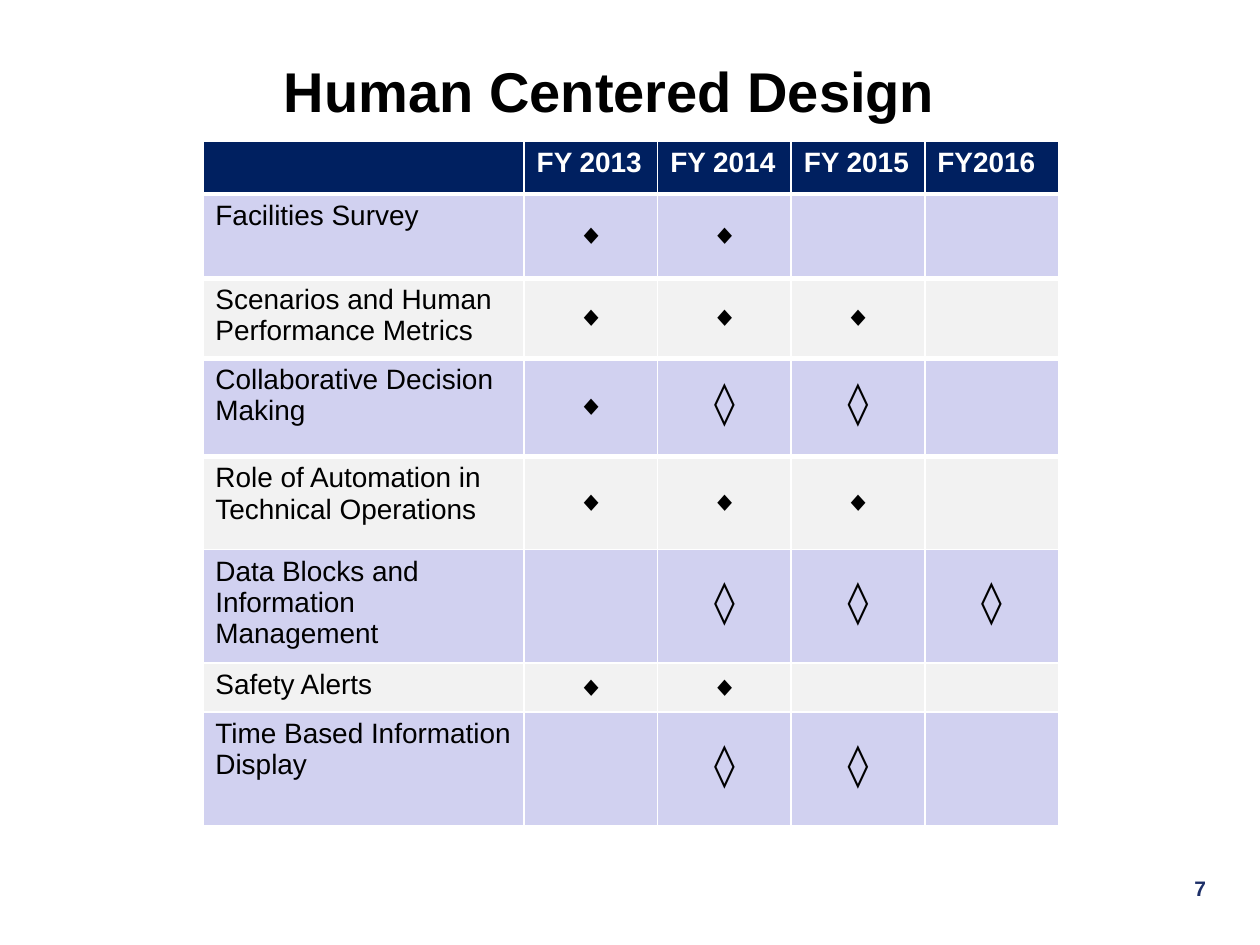
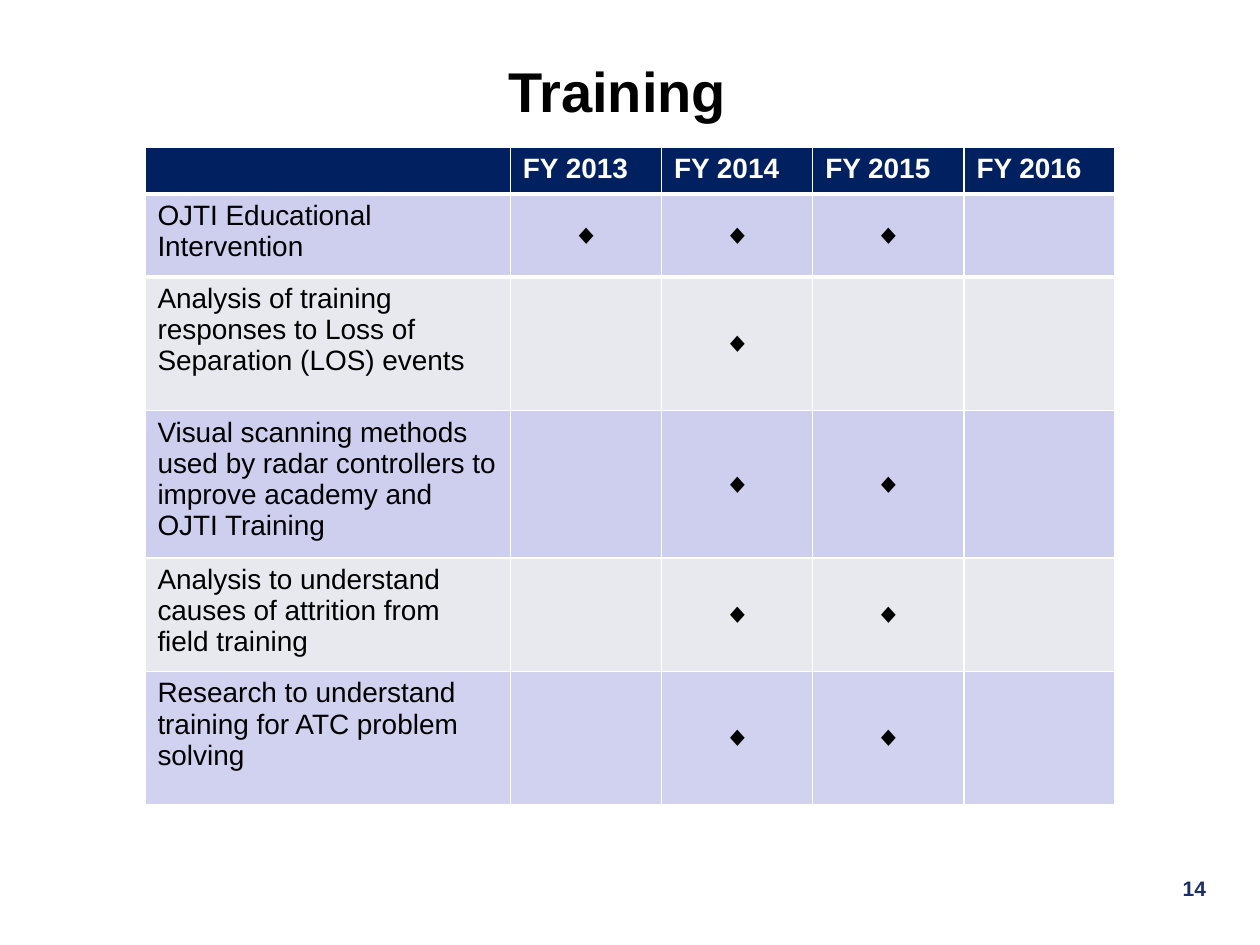
from pptx import Presentation
from pptx.dml.color import RGBColor
from pptx.enum import text as t
from pptx.oxml import parse_xml
from pptx.oxml import ns
from pptx.util import Inches, Pt

NAVY = RGBColor(0x00, 0x20, 0x60)
NUMBER_BLUE = RGBColor(0x1D, 0x2F, 0x68)
LILAC = RGBColor(0xD1, 0xD1, 0xF0)
DEEP_LILAC = RGBColor(0xCE, 0xCE, 0xEF)
PALE_GREY = RGBColor(0xF2, 0xF2, 0xF2)
COOL_GREY = RGBColor(0xE8, 0xE8, 0xEF)
BLACK = RGBColor(0x00, 0x00, 0x00)
WHITE = RGBColor(0xFF, 0xFF, 0xFF)

TITLE_BOX = (0.47, 0.38, 8.86, 0.67)
NUMBER_BOX = (7.59, 6.9, 2.08, 0.5)
MARK_STYLES = {
    "◆": dict(size=16),
    "◊": dict(size=24, font="League Spartan", bold=True),
}

DESIGN_ROWS = [
    ("Facilities Survey", "◆◆--", 0.67, LILAC),
    ("Scenarios and Human Performance Metrics", "◆◆◆-", 0.63, PALE_GREY),
    ("Collaborative Decision Making", "◆◊◊-", 0.78, LILAC),
    ("Role of Automation in Technical Operations", "◆◆◆-", 0.74, PALE_GREY),
    ("Data Blocks and Information Management", "-◊◊◊", 0.9, LILAC),
    ("Safety Alerts", "◆◆--", 0.39, PALE_GREY),
    ("Time Based Information Display", "-◊◊-", 0.9, LILAC),
]
TRAINING_ROWS = [
    ("OJTI Educational Intervention", "◆◆◆-", 0.66, DEEP_LILAC),
    ("Analysis of training responses to Loss of Separation (LOS) events",
     "-◆--", 1.06, COOL_GREY),
    ("Visual scanning methods used by radar controllers to improve academy "
     "and OJTI Training", "-◆◆-", 1.17, DEEP_LILAC),
    ("Analysis to understand causes of attrition from field training",
     "-◆◆-", 0.9, COOL_GREY),
    ("Research to understand training for ATC problem solving",
     "-◆◆-", 1.06, LILAC),
]


def write(frame, text, size=16, font="Arial", color=BLACK, bold=False,
          align=t.PP_ALIGN.LEFT):
    """Put one formatted paragraph into a text frame."""
    para = frame.paragraphs[0]
    para.alignment = align
    span = para.add_run()
    span.text = text
    span.font.size = Pt(size)
    span.font.name = font
    span.font.bold = bold
    span.font.color.rgb = color


def place(shape, box):
    """Move and size a shape to a box given in inches."""
    shape.left, shape.top, shape.width, shape.height = map(Inches, box)


def add_title(page, text, box):
    """Fill the title placeholder and fit it to the box."""
    title = page.shapes.title
    place(title, box)
    title.text_frame.vertical_anchor = t.MSO_ANCHOR.MIDDLE
    write(title.text_frame, text, size=32, bold=True, align=t.PP_ALIGN.CENTER)


def add_number(page, number, box):
    """Write the page number at the right of the box."""
    frame = page.shapes.add_textbox(*map(Inches, box)).text_frame
    frame.word_wrap = True
    write(frame, str(number), size=12, color=NUMBER_BLUE, bold=True,
          align=t.PP_ALIGN.RIGHT)


def style_cell(cell, fill, top, bottom):
    """Give a cell white borders and a solid fill."""
    properties = cell._tc.get_or_add_tcPr()
    for side, width in (("L", 1), ("R", 1), ("T", top), ("B", bottom)):
        properties.append(parse_xml(
            f'<a:ln{side} {ns.nsdecls("a")} w="{Pt(width)}"><a:solidFill>'
            f'<a:srgbClr val="{WHITE}"/></a:solidFill></a:ln{side}>'))
    cell.fill.solid()
    cell.fill.fore_color.rgb = fill


def fill_cell(cell, text, row, column):
    """Write a heading, a topic, a centred mark, or leave a small blank."""
    if not text or text == "-":
        ending = cell.text_frame.paragraphs[0]._p.get_or_add_endParaRPr()
        ending.set("sz", "1600")
    elif row == 0:
        write(cell.text_frame, text, color=WHITE, bold=True)
    elif column == 0:
        write(cell.text_frame, text)
    else:
        cell.vertical_anchor = t.MSO_ANCHOR.MIDDLE
        write(cell.text_frame, text, align=t.PP_ALIGN.CENTER,
              **MARK_STYLES[text])


def add_schedule(page, corner, widths, years, header_height, topics,
                 thick_rules):
    """Build the table of topics by fiscal year from its top left corner."""
    rows = [(["", *years], header_height, NAVY)]
    rows += [([topic, *marks], height, fill)
             for topic, marks, height, fill in topics]
    topic_width, year_width = widths
    columns = [topic_width] + [year_width] * len(years)
    size = sum(columns), sum(height for _, height, _ in rows)
    table = page.shapes.add_table(
        len(rows), len(columns), *map(Inches, corner + size)).table
    for column, width in zip(table.columns, columns):
        column.width = Inches(width)
    for row, (texts, height, fill) in enumerate(rows):
        table.rows[row].height = Inches(height)
        top = 3 if 0 < row <= thick_rules else 1
        bottom = 3 if row < thick_rules else 1
        for column, text in enumerate(texts):
            cell = table.cell(row, column)
            style_cell(cell, fill, top, bottom)
            fill_cell(cell, text, row, column)


def add_page(deck, title, number, **schedule):
    """Add one page with its title, number and schedule."""
    page = deck.slides.add_slide(deck.slide_layouts[5])
    add_number(page, number, NUMBER_BOX)
    add_title(page, title, TITLE_BOX)
    add_schedule(page, **schedule)


def main():
    """Build and save the deck."""
    deck = Presentation()
    deck.slide_width, deck.slide_height = Inches(10), Inches(7.5)
    years = ["FY 2013", "FY 2014", "FY 2015"]
    add_page(deck, "Human Centered Design ", 7, corner=(1.61, 1.12),
             widths=(2.55, 1.06), years=years + ["FY2016"],
             header_height=0.42, topics=DESIGN_ROWS, thick_rules=4)
    add_page(deck, "Training", 14, corner=(1.15, 1.17),
             widths=(2.9, 1.2), years=years + ["FY 2016"],
             header_height=0.37, topics=TRAINING_ROWS, thick_rules=2)
    deck.save("out.pptx")


if __name__ == "__main__":
    main()
